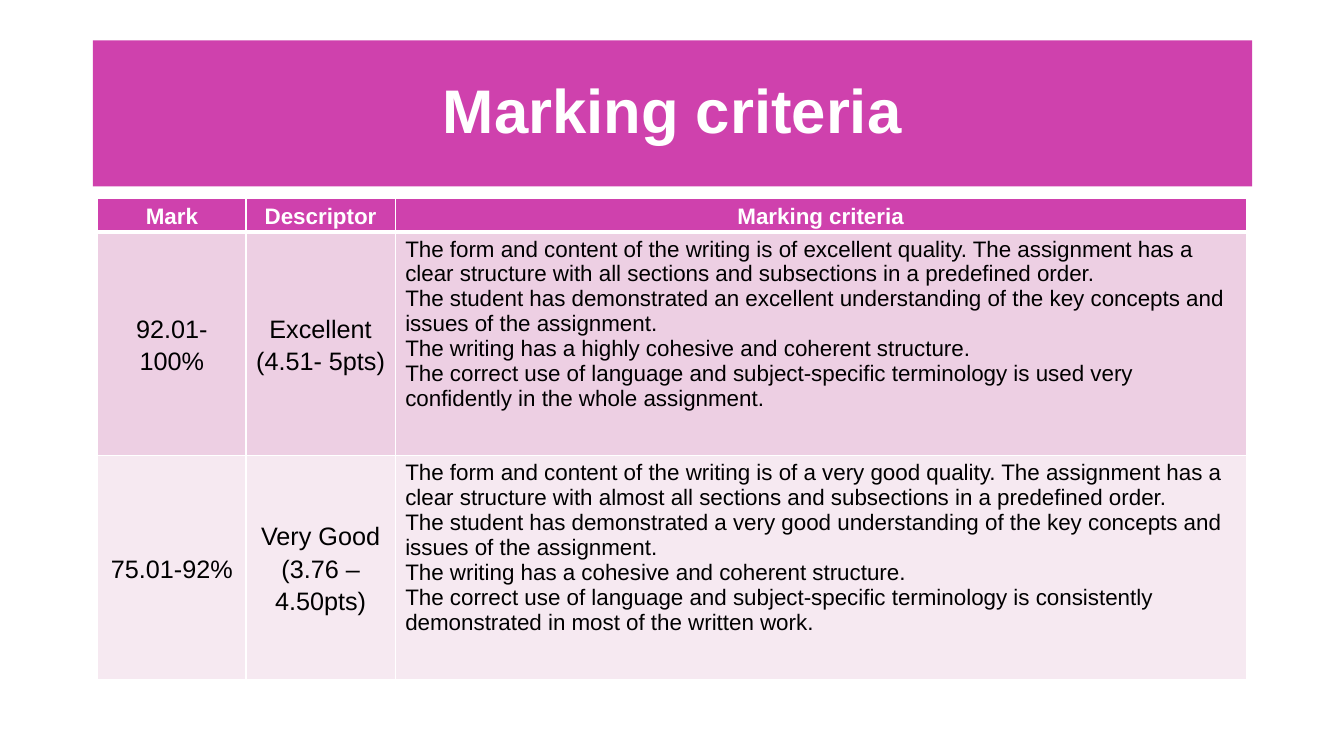
from dataclasses import dataclass

from lxml import etree
from pptx import Presentation
from pptx.dml.color import RGBColor
from pptx.enum import text
from pptx.oxml import ns
from pptx.util import Inches, Pt


@dataclass(frozen=True)
class Theme:
    font: str = "Arial"
    accent: str = "CF41AD"
    light: str = "FFFFFF"
    dark: str = "000000"
    bands: tuple = ("EDCFE3", "F6E9F1")
    title_size: int = 44
    mark_size: int = 18
    body_size: int = 16


theme = Theme()


def set_font(paragraph, size, color, bold=False):
    font = paragraph.font
    font.name, font.size, font.bold = theme.font, Pt(size), bold
    font.color.rgb = RGBColor.from_string(color)


def add_border(cell, side, width):
    """Draw one cell edge (L, R, T or B); call before filling the cell."""
    properties = cell._tc.get_or_add_tcPr()
    line = etree.SubElement(properties, ns.qn(f"a:ln{side}"), w=str(Pt(width)))
    fill = etree.SubElement(line, ns.qn("a:solidFill"))
    etree.SubElement(fill, ns.qn("a:srgbClr"), val=theme.light)


rows = [
    ("Mark", "Descriptor", "Marking criteria"),
    (
        "92.01-100%",
        "Excellent\n(4.51- 5pts)",
        "The form and content of the writing is of excellent quality. The assignment has a "
        "clear structure with all sections and subsections in a predefined order.\n"
        "The student has demonstrated an excellent understanding of the key concepts and "
        "issues of the assignment.\n"
        "The writing has a highly cohesive and coherent structure.\n"
        "The correct use of language and subject-specific terminology is used very "
        "confidently in the whole assignment.",
    ),
    (
        "75.01-92%",
        "Very Good\n(3.76 – 4.50pts)",
        "The form and content of the writing is of a very good quality. The assignment has a "
        "clear structure with almost all sections and subsections in a predefined order.\n"
        "The student has demonstrated a very good understanding of the key concepts and "
        "issues of the assignment.\n"
        "The writing has a cohesive and coherent structure.\n"
        "The correct use of language and subject-specific terminology is consistently "
        "demonstrated in most of the written work.",
    ),
]
column_widths = (1.47, 1.48, 8.44)
row_heights = (0.33, 2.22, 2.22)

deck = Presentation()
deck.slide_width, deck.slide_height = Inches(13.33), Inches(7.5)
slide = deck.slides.add_slide(deck.slide_layouts[5])

title = slide.shapes.title
title.left, title.top = Inches(0.92), Inches(0.4)
title.width, title.height = Inches(11.5), Inches(1.45)
title.fill.solid()
title.fill.fore_color.rgb = RGBColor.from_string(theme.accent)
title.text_frame.text = "Marking criteria"
title.text_frame.vertical_anchor = text.MSO_ANCHOR.MIDDLE
heading = title.text_frame.paragraphs[0]
heading.alignment = text.PP_ALIGN.CENTER
heading.line_spacing = 0.9
set_font(heading, theme.title_size, theme.light, bold=True)

criteria = slide.shapes.add_table(
    len(rows), len(column_widths), Inches(0.97), Inches(1.97),
    Inches(sum(column_widths)), Inches(sum(row_heights)),
).table
for column, width in zip(criteria.columns, column_widths):
    column.width = Inches(width)
for row, height in zip(criteria.rows, row_heights):
    row.height = Inches(height)

for r, entries in enumerate(rows):
    is_header = r == 0
    for c, entry in enumerate(entries):
        cell = criteria.cell(r, c)
        is_description = not is_header and c == 2
        for side in "LRTB":
            on_header_rule = (r, side) in ((0, "B"), (1, "T"))
            add_border(cell, side, 3 if on_header_rule else 1)
        cell.fill.solid()
        cell.fill.fore_color.rgb = RGBColor.from_string(
            theme.accent if is_header else theme.bands[r - 1])
        cell.text_frame.text = entry
        if not is_description:
            cell.vertical_anchor = text.MSO_ANCHOR.MIDDLE
            cell.margin_left = cell.margin_right = Inches(0.07)
            cell.margin_top = cell.margin_bottom = 0
        for paragraph in cell.text_frame.paragraphs:
            if not is_description:
                paragraph.alignment = text.PP_ALIGN.CENTER
                paragraph.line_spacing = 1.15
            set_font(
                paragraph,
                theme.body_size if is_header or is_description else theme.mark_size,
                theme.light if is_header else theme.dark,
                bold=is_header,
            )

deck.save("out.pptx")
